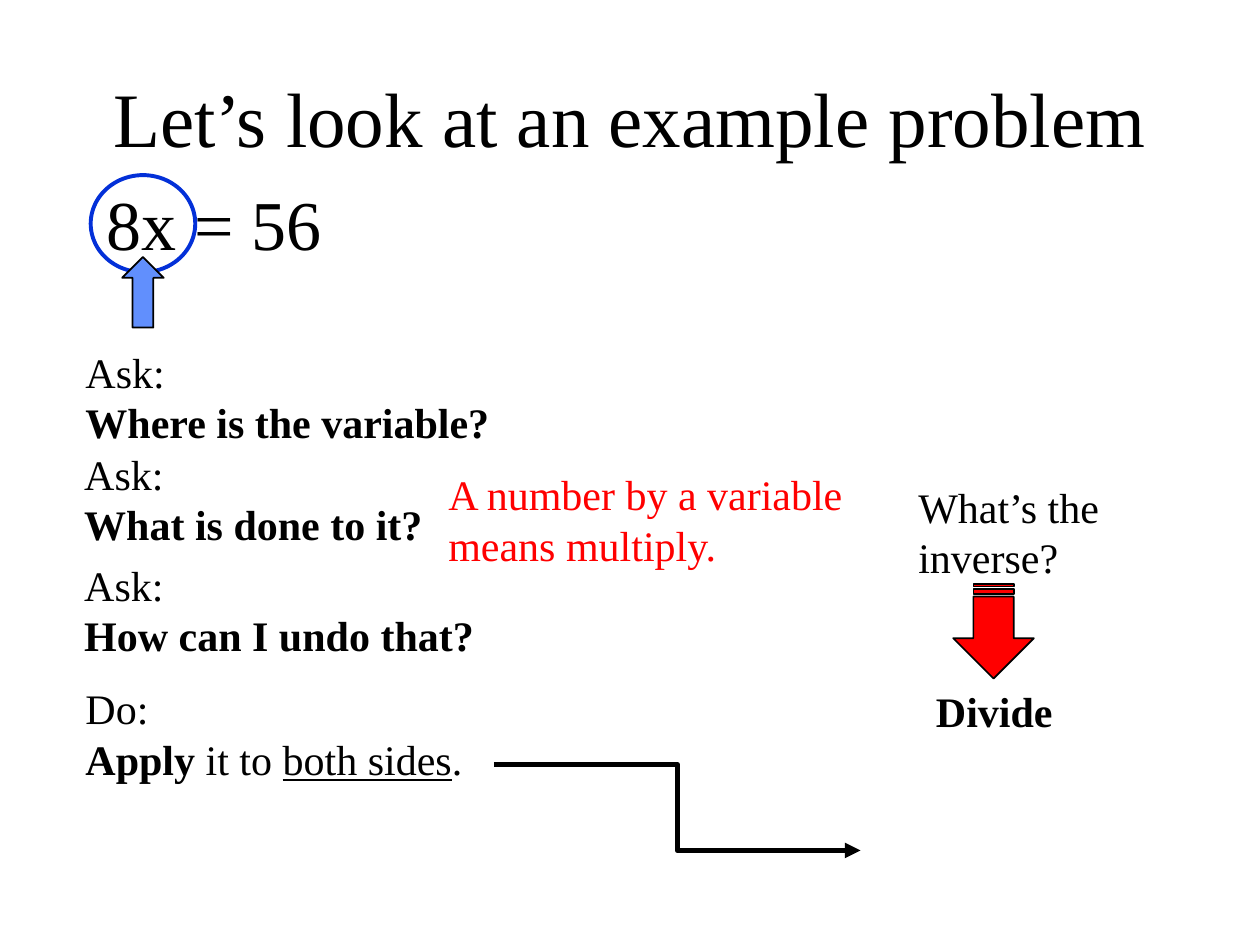
"""Build the slide that works through an example equation, 8x = 56."""
from lxml.etree import SubElement
from pptx import Presentation
from pptx.dml.color import RGBColor
from pptx.enum.shapes import MSO_CONNECTOR, MSO_SHAPE as SHAPE
from pptx.enum.text import MSO_ANCHOR, PP_ALIGN
from pptx.oxml.ns import qn
from pptx.util import Inches, Pt


def rgb(value):
    return RGBColor.from_string(value)


def add_text(s, box, paragraphs, size=24, color="000000"):
    tf = s.shapes.add_textbox(*map(Inches, box)).text_frame
    tf.word_wrap = True
    for i, runs in enumerate(paragraphs):
        p = tf.paragraphs[0] if i == 0 else tf.add_paragraph()
        for text, style in runs:
            r = p.add_run()
            r.text = text
            r.font.name = "Times New Roman"
            r.font.size = Pt(size)
            r.font.color.rgb = rgb(color)
            r.font.bold = style == "b"
            r.font.underline = style == "u"
    return tf


prs = Presentation()
prs.slide_width, prs.slide_height = Inches(10), Inches(7.5)
s = prs.slides.add_slide(prs.slide_layouts[6])

tf = add_text(s, (0.75, 0.3, 8.5, 1.25), [[("Let’s look at an example problem", "")]], 44)
tf.vertical_anchor = MSO_ANCHOR.MIDDLE
tf.paragraphs[0].alignment = PP_ALIGN.CENTER
add_text(s, (0.75, 1.38, 2.17, 0.77), [[("8x = 56", "")]], 40)

questions = [
    (0.58, 2.7, 3.58, "Where is the variable?"),
    (0.57, 3.51, 3.08, "What is done to it?"),
    (0.57, 4.39, 3.35, "How can I undo that?"),
]
for x, y, w, question in questions:
    add_text(s, (x, y, w, 0.91), [[("Ask:", "")], [(question, "b")]])

add_text(s, (0.58, 5.37, 3.34, 0.91), [
    [("Do:", "")],
    [("Apply", "b"), (" it to ", ""), ("both sides", "u"), (".", "")],
])
add_text(s, (3.46, 3.67, 3.38, 0.91),
         [[("A number by a variable means multiply.", "")]], color="FF0000")
add_text(s, (7.19, 3.77, 2.17, 0.91), [[("What’s the inverse?", "")]])
add_text(s, (7.33, 5.39, 1.25, 0.5), [[("Divide", "b")]])

shapes = [
    (SHAPE.OVAL, (0.72, 1.39, 0.83, 0.77), None, "0330D8", 2.25, 0),
    (SHAPE.UP_ARROW, (0.97, 2.04, 0.33, 0.56), "618FFD", "000000", 1, 0),
    (SHAPE.STRIPED_RIGHT_ARROW, (7.51, 4.69, 0.75, 0.64), "FF0000", "000000", 1, 90),
]
for kind, box, fill, line, width, rotation in shapes:
    sp = s.shapes.add_shape(kind, *map(Inches, box))
    sp.shadow.inherit = False
    sp.rotation = rotation
    if fill:
        sp.fill.solid()
        sp.fill.fore_color.rgb = rgb(fill)
    else:
        sp.fill.background()
    sp.line.color.rgb = rgb(line)
    sp.line.width = Pt(width)

cxn = s.shapes.add_connector(
    MSO_CONNECTOR.ELBOW, Inches(3.92), Inches(6.07), Inches(6.83), Inches(6.75))
cxn.line.color.rgb = rgb("000000")
cxn.line.width = Pt(3)
SubElement(cxn.line._get_or_add_ln(), qn("a:tailEnd"), type="triangle")
SubElement(cxn._element.spPr, qn("a:effectLst"))

prs.save("out.pptx")
